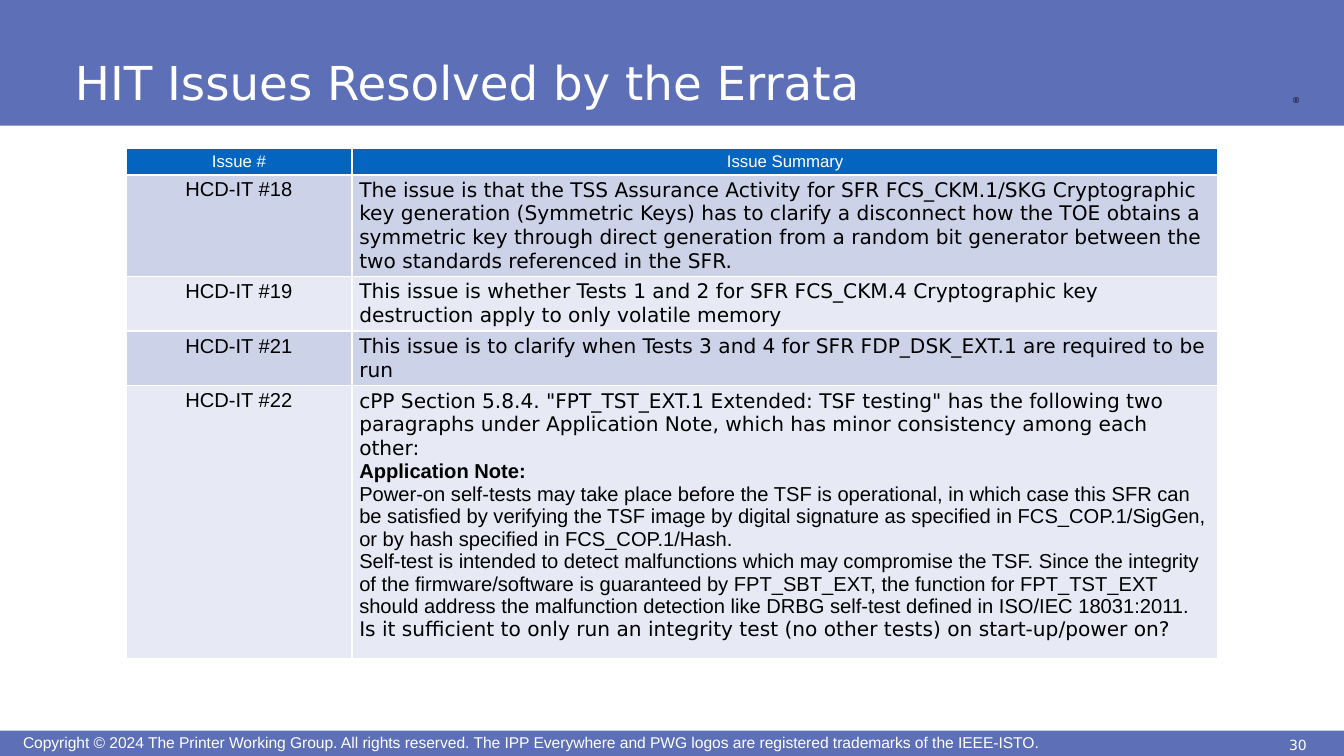
from dataclasses import dataclass

from lxml.etree import SubElement
from pptx import Presentation
from pptx.dml.color import RGBColor
from pptx.enum.shapes import MSO_SHAPE
from pptx.enum.text import MSO_ANCHOR, MSO_AUTO_SIZE, PP_ALIGN
from pptx.oxml.ns import qn
from pptx.slide import Slide
from pptx.table import _Cell
from pptx.text.text import TextFrame, _Paragraph
from pptx.util import Inches, Pt


@dataclass(frozen=True)
class Theme:
    band: str = "5D6FB7"
    header: str = "0365C0"
    odd_row: str = "CCD3E8"
    even_row: str = "E7EAF4"
    white: str = "FFFFFF"
    black: str = "000000"
    sans: str = "Arial"
    wide: str = "DejaVu Sans"
    title_size: float = 27.8
    body_size: float = 12
    header_size: float = 10
    footer_size: float = 9.3
    number_size: float = 8.3
    mark_size: float = 5


THEME = Theme()


@dataclass(frozen=True)
class Box:
    left: float
    top: float
    width: float
    height: float

    def lengths(self) -> tuple:
        return tuple(Inches(v) for v in (self.left, self.top, self.width, self.height))


@dataclass(frozen=True)
class Passage:
    text: str
    font: str = THEME.wide
    heading: str = ""


@dataclass(frozen=True)
class Issue:
    number: str
    height: float
    summary: tuple[Passage, ...]


ISSUES = (
    Issue("HCD-IT #18", 0.84, (Passage(
        "The issue is that the TSS Assurance Activity for SFR FCS_CKM.1/SKG Cryptographic key "
        "generation (Symmetric Keys) has to clarify a disconnect how the TOE obtains a symmetric "
        "key through direct generation from a random bit generator between the two standards "
        "referenced in the SFR."),)),
    Issue("HCD-IT #19", 0.45, (Passage(
        "This issue is whether Tests 1 and 2 for SFR FCS_CKM.4 Cryptographic key destruction "
        "apply to only volatile memory"),)),
    Issue("HCD-IT #21", 0.45, (Passage(
        "This issue is to clarify when Tests 3 and 4 for SFR FDP_DSK_EXT.1 are required to be run"),)),
    Issue("HCD-IT #22", 2.26, (
        Passage(
            'cPP Section 5.8.4. "FPT_TST_EXT.1 Extended: TSF testing" has the following two '
            "paragraphs under Application Note, which has minor consistency among each other:"),
        Passage(
            "Power-on self-tests may take place before the TSF is operational, in which case this "
            "SFR can be satisfied by verifying the TSF image by digital signature as specified in "
            "FCS_COP.1/SigGen, or by hash specified in FCS_COP.1/Hash.",
            THEME.sans, "Application Note:"),
        Passage(
            "Self-test is intended to detect malfunctions which may compromise the TSF. Since the "
            "integrity of the firmware/software is guaranteed by FPT_SBT_EXT, the function for "
            "FPT_TST_EXT should address the malfunction detection like DRBG self-test defined in "
            "ISO/IEC 18031:2011.", THEME.sans),
        Passage("Is it sufficient to only run an integrity test (no other tests) on start-up/power on?"),
    )),
)


def write(paragraph: _Paragraph, text: str, *, size: float = THEME.body_size,
          font: str = THEME.sans, color: str = THEME.black, bold: bool = False,
          align: PP_ALIGN = PP_ALIGN.LEFT) -> None:
    paragraph.alignment = align
    run = paragraph.add_run()
    run.text = text
    run.font.size = Pt(size)
    run.font.name = font
    run.font.bold = bold
    run.font.color.rgb = RGBColor.from_string(color)


def set_frame(frame: TextFrame, margins: tuple, anchor: MSO_ANCHOR, wrap: bool = True) -> None:
    frame.margin_left = frame.margin_right = Inches(margins[0])
    frame.margin_top = frame.margin_bottom = Inches(margins[1])
    frame.vertical_anchor = anchor
    frame.word_wrap = wrap
    frame.auto_size = MSO_AUTO_SIZE.NONE


def add_label(slide: Slide, box: Box, text: str, margins: tuple = (0, 0),
              anchor: MSO_ANCHOR = MSO_ANCHOR.TOP, wrap: bool = True, **style) -> None:
    frame = slide.shapes.add_textbox(*box.lengths()).text_frame
    set_frame(frame, margins, anchor, wrap)
    write(frame.paragraphs[0], text, **style)


def add_band(slide: Slide, box: Box) -> None:
    shape = slide.shapes.add_shape(MSO_SHAPE.RECTANGLE, *box.lengths())
    shape.shadow.inherit = False
    shape.fill.solid()
    shape.fill.fore_color.rgb = RGBColor.from_string(THEME.band)
    shape.line.fill.background()


def place_title(slide: Slide, box: Box, text: str) -> None:
    title = slide.shapes.title
    title.left, title.top, title.width, title.height = box.lengths()
    title.element.getparent().append(title.element)
    set_frame(title.text_frame, (0.06, 0.06), MSO_ANCHOR.BOTTOM)
    write(title.text_frame.paragraphs[0], text, size=THEME.title_size,
          font=THEME.wide, color=THEME.white)


def format_cell(cell: _Cell, fill: str) -> None:
    cell.margin_left = cell.margin_right = Inches(0.06)
    cell.margin_top = cell.margin_bottom = Inches(0.03)
    properties = cell._tc.get_or_add_tcPr()
    for side in ("a:lnL", "a:lnR", "a:lnT", "a:lnB"):
        border = SubElement(properties, qn(side), w=str(Pt(1)))
        SubElement(SubElement(border, qn("a:solidFill")), qn("a:srgbClr"), val=THEME.white)
    cell.fill.solid()
    cell.fill.fore_color.rgb = RGBColor.from_string(fill)


def fill_summary(frame: TextFrame, passages: tuple[Passage, ...]) -> None:
    for index, passage in enumerate(passages):
        paragraph = frame.add_paragraph() if index else frame.paragraphs[0]
        if passage.heading:
            write(paragraph, passage.heading, bold=True)
            paragraph.add_line_break()
        write(paragraph, passage.text, font=passage.font)


def add_issue_table(slide: Slide, box: Box) -> None:
    table = slide.shapes.add_table(len(ISSUES) + 1, 2, *box.lengths()).table
    for column, width in zip(table.columns, (1.87, 7.16)):
        column.width = Inches(width)
    table.rows[0].height = Inches(0.21)
    for cell, text in zip(table.rows[0].cells, ("Issue #", "Issue Summary")):
        format_cell(cell, THEME.header)
        write(cell.text_frame.paragraphs[0], text, size=THEME.header_size,
              color=THEME.white, align=PP_ALIGN.CENTER)
    for index, issue in enumerate(ISSUES, start=1):
        row = table.rows[index]
        row.height = Inches(issue.height)
        number, summary = row.cells
        for cell in (number, summary):
            format_cell(cell, THEME.odd_row if index % 2 else THEME.even_row)
        write(number.text_frame.paragraphs[0], issue.number, align=PP_ALIGN.CENTER)
        fill_summary(summary.text_frame, issue.summary)


def main() -> None:
    presentation = Presentation()
    presentation.slide_width, presentation.slide_height = Inches(11.11), Inches(6.25)
    slide = presentation.slides.add_slide(presentation.slide_layouts[5])
    add_band(slide, Box(0, 6.04, 11.11, 0.21))
    add_band(slide, Box(0, 0, 11.11, 1.04))
    add_label(slide, Box(0.19, 6.06, 10.35, 0.16),
              "Copyright © 2024 The Printer Working Group. All rights reserved. The IPP Everywhere "
              "and PWG logos are registered trademarks of the IEEE-ISTO.",
              anchor=MSO_ANCHOR.MIDDLE, size=THEME.footer_size, color=THEME.white)
    add_label(slide, Box(10.64, 0.74, 0.21, 0.18), "®", margins=(0.05, 0.05),
              wrap=False, size=THEME.mark_size)
    place_title(slide, Box(0.56, 0.04, 9.2, 0.93), "HIT Issues Resolved by the Errata")
    add_label(slide, Box(10.38, 6.04, 0.7, 0.21), "30", margins=(0.1, 0.05),
              size=THEME.number_size, font=THEME.wide, color=THEME.white, align=PP_ALIGN.CENTER)
    add_issue_table(slide, Box(1.04, 1.23, 9.03, 4.21))
    presentation.save("out.pptx")


if __name__ == "__main__":
    main()
